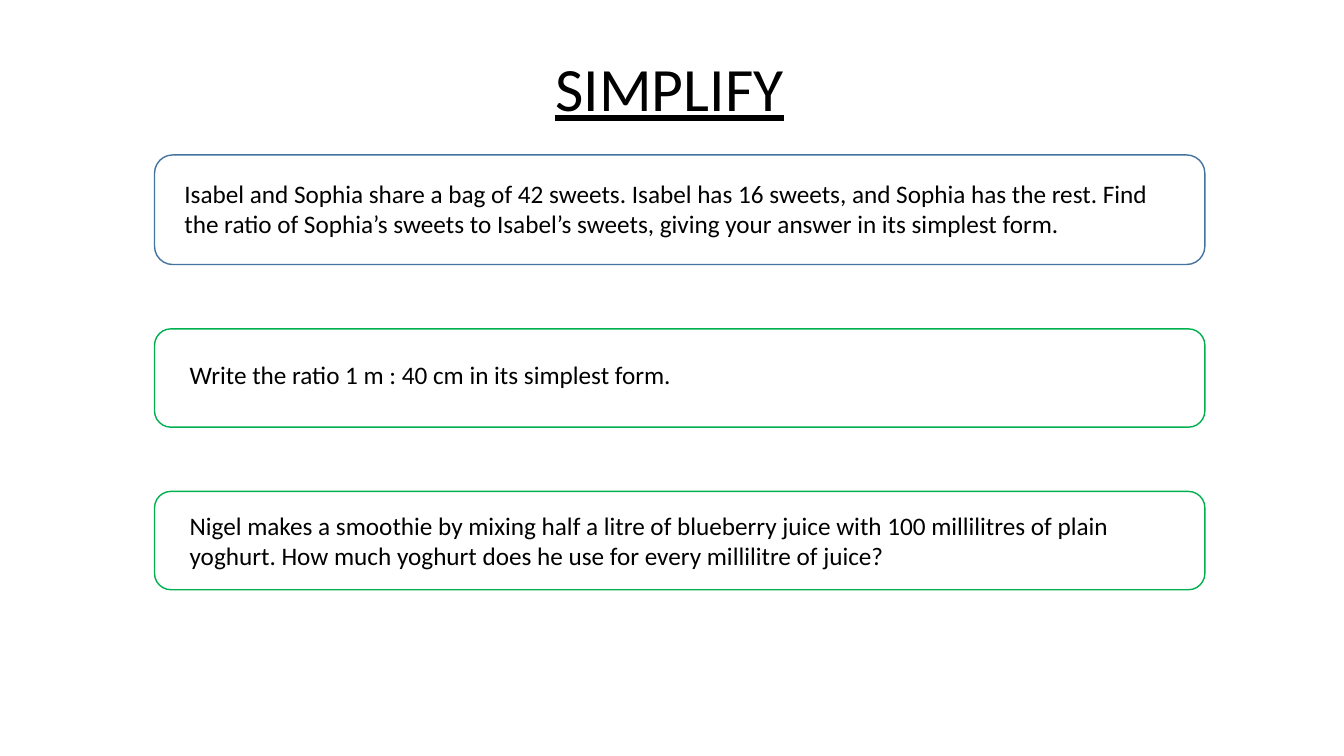
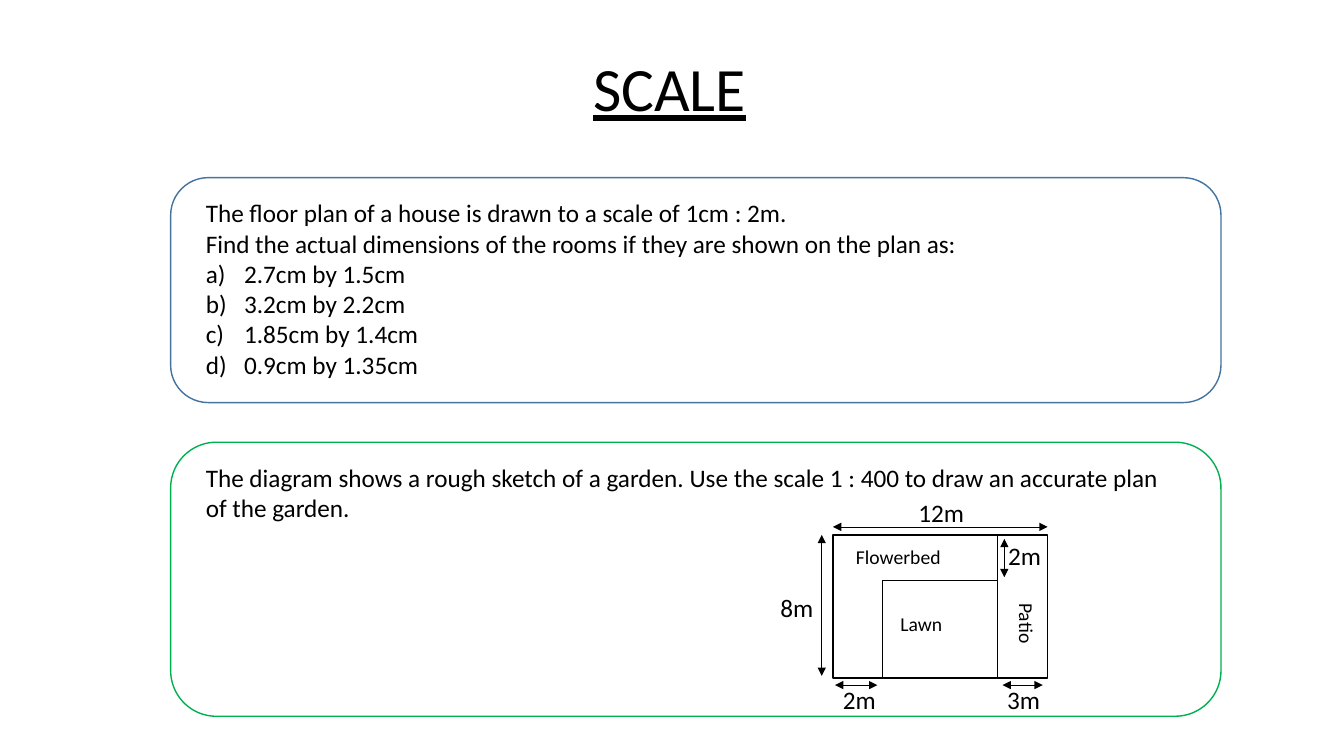
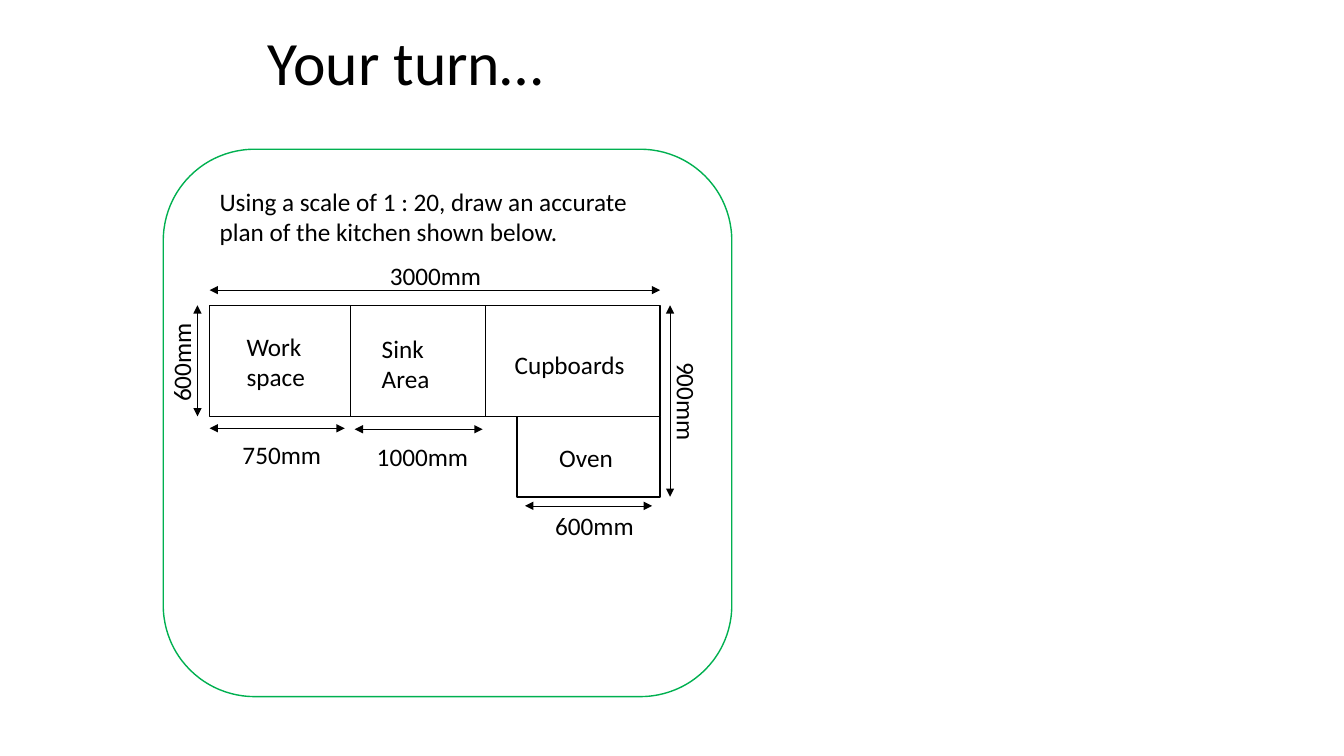
from dataclasses import dataclass

from lxml.etree import SubElement
from pptx import Presentation
from pptx.dml.color import RGBColor
from pptx.enum.shapes import MSO_CONNECTOR, MSO_SHAPE
from pptx.enum.text import MSO_ANCHOR, MSO_AUTO_SIZE, PP_ALIGN
from pptx.oxml.ns import qn
from pptx.util import Inches, Pt

BLACK = RGBColor(0x00, 0x00, 0x00)
BLUE = RGBColor(0x43, 0x73, 0x9E)
GREEN = RGBColor(0x00, 0xB0, 0x50)
FONT = "Calibri"
TITLE_SIZE, BODY_SIZE, SMALL_SIZE = 44, 18, 14
LIST_INDENT = Inches(0.38)


@dataclass
class Box:
    """A region in inches; regions inside it are given in percent of its size."""
    left: float
    top: float
    width: float
    height: float

    def x(self, share):
        return self.left + self.width * share / 100

    def y(self, share):
        return self.top + self.height * share / 100

    def region(self, left, top, width, height):
        return Box(self.x(left), self.y(top),
                   self.width * width / 100, self.height * height / 100)

    def lengths(self):
        return [Inches(n) for n in (self.left, self.top, self.width, self.height)]


PAGE = Box(0, 0, 13.33, 7.5)


# Shared parts
def add_run(paragraph, text, size, underline=None):
    run = paragraph.add_run()
    run.text = text
    run.font.name = FONT
    run.font.size = Pt(size)
    run.font.color.rgb = BLACK
    run.font.underline = underline


def add_text(slide, box, text, size=BODY_SIZE, rotation=0, listed=()):
    shape = slide.shapes.add_textbox(*box.lengths())
    shape.rotation = rotation
    frame = shape.text_frame
    frame.word_wrap = True
    frame.auto_size = MSO_AUTO_SIZE.SHAPE_TO_FIT_TEXT
    lines = text.split("\n")
    for index, line in enumerate([*lines, *listed]):
        paragraph = frame.add_paragraph() if index else frame.paragraphs[0]
        add_run(paragraph, line, size)
        if index >= len(lines):
            properties = paragraph._p.get_or_add_pPr()
            properties.set("marL", str(int(LIST_INDENT)))
            properties.set("indent", str(-int(LIST_INDENT)))
            SubElement(properties, qn("a:buFont"), typeface="+mj-lt")
            SubElement(properties, qn("a:buAutoNum"), type="alphaLcParenR")


def add_title(slide, box, text, centred=True):
    frame = slide.shapes.add_textbox(*box.lengths()).text_frame
    frame.word_wrap = True
    frame.vertical_anchor = MSO_ANCHOR.MIDDLE
    paragraph = frame.paragraphs[0]
    paragraph.alignment = PP_ALIGN.CENTER if centred else PP_ALIGN.LEFT
    paragraph.line_spacing = 0.9
    add_run(paragraph, text, TITLE_SIZE, underline=centred)


def add_outline(slide, box, colour=BLACK, kind=MSO_SHAPE.RECTANGLE):
    shape = slide.shapes.add_shape(kind, *box.lengths())
    shape.shadow.inherit = False
    shape.fill.background()
    shape.line.color.rgb = colour
    shape.line.width = Pt(1)


def add_card(slide, box, colour, text_box, text, listed=()):
    add_outline(slide, box, colour, MSO_SHAPE.ROUNDED_RECTANGLE)
    add_text(slide, box.region(*text_box), text, listed=listed)


def add_lines(slide, box, ends, arrows=False):
    for x1, y1, x2, y2 in ends:
        connector = slide.shapes.add_connector(
            MSO_CONNECTOR.STRAIGHT, Inches(box.x(x1)), Inches(box.y(y1)),
            Inches(box.x(x2)), Inches(box.y(y2)))
        connector.line.color.rgb = BLACK
        connector.line.width = Pt(0.5)
        properties = connector._element.spPr
        if arrows:
            line = properties.find(qn("a:ln"))
            for end in ("a:headEnd", "a:tailEnd"):
                SubElement(line, qn(end), type="triangle")
        SubElement(properties, qn("a:effectLst"))


# Diagrams
def draw_garden(slide, box):
    lawn_left, patio_left, lawn_top = 23, 76.5, 31.7
    add_outline(slide, box)
    add_lines(slide, box, [
        (lawn_left, 100, lawn_left, lawn_top),
        (lawn_left, lawn_top, patio_left, lawn_top),
        (patio_left, 100, patio_left, 0),
    ])
    add_lines(slide, box, [
        (0, -5.6, 100, -5.6),
        (1, 105, 20.7, 105),
        (79, 105, 97.7, 105),
        (-5.2, 0, -5.2, 98.6),
        (79.8, 2.8, 79.8, 29.6),
    ], arrows=True)
    for left, top, text in [
        (35.2, -29.6, "12m"), (77, 0, "2m"), (76.5, 100.7, "3m"),
        (0, 100.7, "2m"), (-29.1, 36.6, "8m"),
    ]:
        add_text(slide, box.region(left, top, 38, 28.2), text)
    for left, top, width, rotation, text in [
        (6.1, 3.5, 68.5, 0, "Flowerbed"),
        (26.8, 50.7, 68.5, 0, "Lawn"),
        (61, 72.5, 58.2, 90, "Patio"),
    ]:
        add_text(slide, box.region(left, top, width, 24), text, SMALL_SIZE, rotation)


def draw_kitchen(slide, box):
    counter_bottom, sink_left, cupboards_left, oven_left = 58, 31.3, 61.1, 68.25
    add_outline(slide, box.region(0, 0, 100, counter_bottom))
    add_outline(slide, box.region(oven_left, counter_bottom,
                                  100 - oven_left, 100 - counter_bottom))
    add_lines(slide, box, [(x, 0, x, counter_bottom)
                           for x in (sink_left, cupboards_left)])
    add_lines(slide, box, [
        (0, -7.9, 100, -7.9),
        (0, 64.2, 30, 64.2),
        (32.2, 64.7, 60.6, 64.7),
        (70, 104.7, 98.2, 104.7),
        (-2.7, 0, -2.7, counter_bottom),
        (102.2, 0, 102.2, 100),
    ], arrows=True)
    one_line, two_lines = 21, 37.4
    for left, top, width, height, rotation, text in [
        (5.1, 67.4, 22.1, one_line, 0, "750mm"),
        (34.9, 68.4, 27.1, one_line, 0, "1000mm"),
        (74.5, 104.2, 27.1, one_line, 0, "600mm"),
        (-19.9, 13.2, 27.1, one_line, 270, "600mm"),
        (37.8, -26.3, 31.1, one_line, 0, "3000mm"),
        (92.4, 45.8, 27.1, one_line, 90, "900mm"),
        (6, 11, 24.8, two_lines, 0, "Work space"),
        (36, 12.1, 24.8, two_lines, 0, "Sink Area"),
        (65.5, 20.5, 31.1, one_line, 0, "Cupboards"),
        (75.4, 69, 31.1, one_line, 0, "Oven"),
    ]:
        add_text(slide, box.region(left, top, width, height), text, rotation=rotation)


# Slides
HEADING = PAGE.region(17.5, 2.5, 64.65, 19.3)
CARD_WIDTH = 78.15


def build_simplify(slide):
    add_title(slide, HEADING, "SIMPLIFY")
    for top, height, colour, text_box, text in [
        (20.5, 14.5, BLUE, (1.9, 16.5, 94.7, 65),
         "Isabel and Sophia share a bag of 42 sweets. Isabel has 16 sweets, and "
         "Sophia has the rest. Find the ratio of Sophia’s sweets to Isabel’s "
         "sweets, giving your answer in its simplest form."),
        (43.5, 13, GREEN, (2.4, 25.5, 93.1, 41),
         "Write the ratio 1 m : 40 cm in its simplest form."),
        (65, 13, GREEN, (2.4, 14.3, 93.1, 72.4),
         "Nigel makes a smoothie by mixing half a litre of blueberry juice with "
         "100 millilitres of plain yoghurt. How much yoghurt does he use for "
         "every millilitre of juice?"),
    ]:
        add_card(slide, PAGE.region(11.5, top, CARD_WIDTH, height), colour, text_box, text)


def build_scale(slide):
    add_title(slide, HEADING, "SCALE")
    add_card(slide, PAGE.region(12.7, 23.5, CARD_WIDTH, 29.75), BLUE,
             (2.4, 6.7, 94.7, 86),
             "The floor plan of a house is drawn to a scale of 1cm : 2m.\n"
             "Find the actual dimensions of the rooms if they are shown on the plan as:",
             listed=("2.7cm by 1.5cm", "3.2cm by 2.2cm",
                     "1.85cm by 1.4cm", "0.9cm by 1.35cm"))
    garden_card = PAGE.region(12.7, 58.5, CARD_WIDTH, 36.25)
    add_card(slide, garden_card, GREEN, (2.4, 5.5, 93.1, 26),
             "The diagram shows a rough sketch of a garden. Use the scale "
             "1 : 400 to draw an accurate plan of the garden.")
    draw_garden(slide, garden_card.region(63.05, 33.8, 20.45, 52.2))


def build_your_turn(slide):
    kitchen_card = PAGE.region(12.15, 19.75, 42.3, 72.4)
    add_card(slide, kitchen_card, GREEN, (8.15, 5.9, 83.5, 13.1),
             "Using a scale of 1 : 20, draw an accurate plan of the kitchen shown below.")
    add_title(slide, PAGE.region(19.2, 0.25, 50.6, 16.7), "Your turn…", centred=False)
    draw_kitchen(slide, kitchen_card.region(8.15, 28.5, 79.25, 35))


def main():
    presentation = Presentation()
    presentation.slide_width = Inches(PAGE.width)
    presentation.slide_height = Inches(PAGE.height)
    blank = presentation.slide_layouts[6]
    for build in (build_simplify, build_scale, build_your_turn):
        build(presentation.slides.add_slide(blank))
    presentation.save("out.pptx")


if __name__ == "__main__":
    main()
